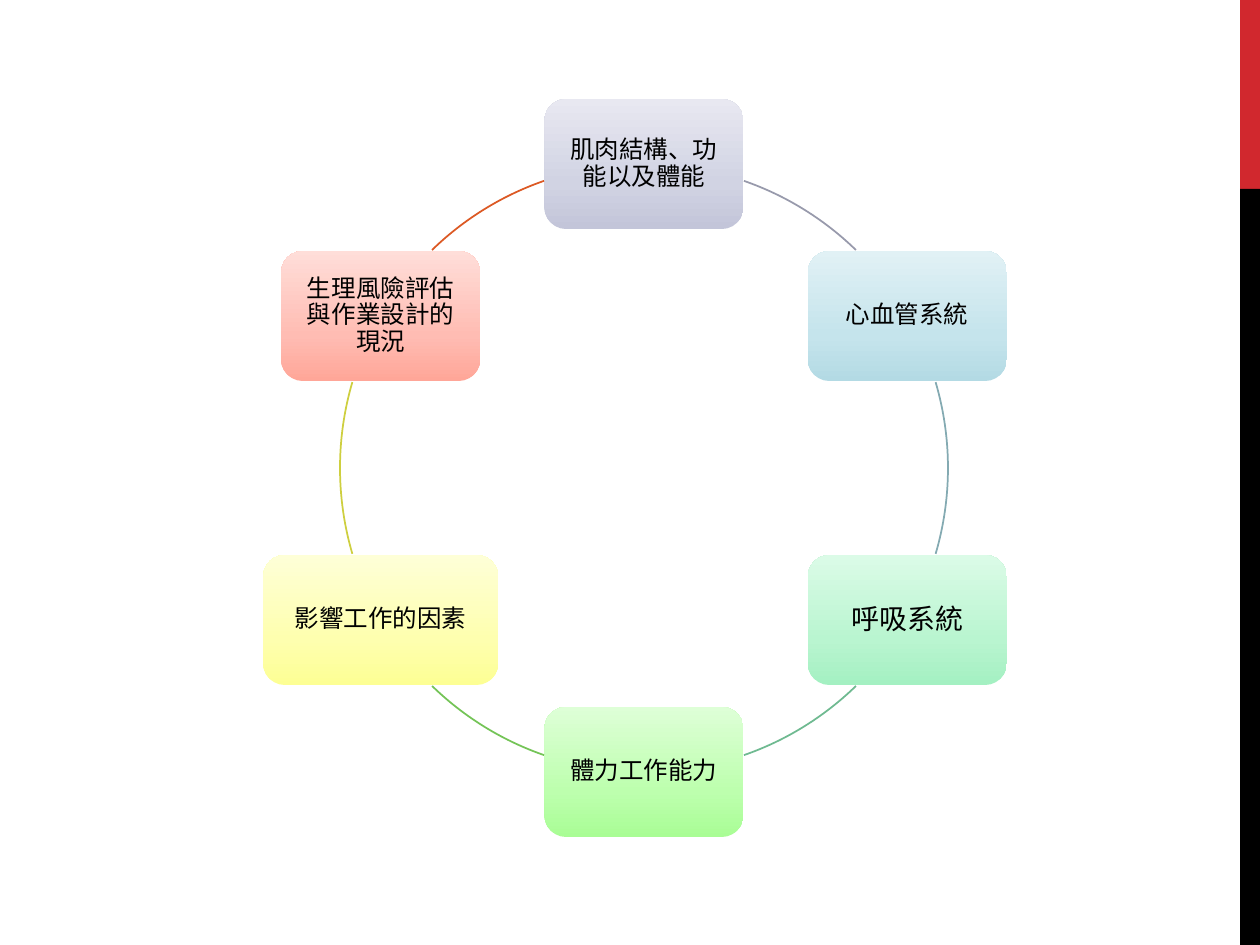
from copy import deepcopy
from math import cos, radians, sin

from pptx import Presentation
from pptx.dml.color import RGBColor
from pptx.enum.shapes import MSO_SHAPE
from pptx.enum.text import MSO_ANCHOR, PP_ALIGN
from pptx.oxml.ns import qn
from pptx.util import Emu, Pt

RECT = MSO_SHAPE.RECTANGLE
ROUND = MSO_SHAPE.ROUNDED_RECTANGLE
ARC = MSO_SHAPE.ARC
CENTER = PP_ALIGN.CENTER
MIDDLE = MSO_ANCHOR.MIDDLE

CX, CY, RADIUS = 644, 468, 304
BOX_W, BOX_H = 199, 130
STEP = 60

TOPICS = [
    ("肌肉結構、功能以及體能", 14, BOX_W, ("C3C5D9", "D1D3E3", "E8E8F1")),
    ("心血管系統", 14, BOX_W, ("B3DAE4", "C5E4EC", "E1F1F5")),
    ("呼吸系統", 16, BOX_W, ("A4F0C2", "B9F5D0", "DBFBE7")),
    ("體力工作能力", 14, BOX_W, ("A9FD95", "BDFFAE", "DEFFD7")),
    ("影響工作的因素", 14, 235, ("FDFF94", "FEFFAF", "FEFFD7")),
    ("生理風險評估與作業設計的現況", 14, BOX_W, ("FFA698", "FFBCB3", "FFDED9")),
]
ARCS = [
    (289.2, 314.2, "989AAC"),
    (343.6, 16.4, "84AAB2"),
    (45.8, 70.8, "6FBA91"),
    (109.2, 134.2, "74C457"),
    (163.6, 196.4, "CECF3F"),
    (225.8, 250.8, "DC5924"),
]


def px(n):
    return Emu(round(n * 914400 / 126))


def rgb(color):
    return RGBColor.from_string(color)


def write(tf, text, size=14, color="000000", font="Arial", margin=8):
    tf.word_wrap = True
    tf.vertical_anchor = MIDDLE
    tf.margin_left = tf.margin_right = px(margin)
    tf.margin_top = tf.margin_bottom = px(margin)
    p = tf.paragraphs[0]
    p.alignment = CENTER
    p.line_spacing = 0.9
    r = p.add_run()
    r.text = text
    r.font.size = Pt(size)
    r.font.name = font
    r.font.color.rgb = rgb(color)


class Canvas:
    stops = (0, 0.35, 1)
    line_width = Pt(1)

    def __init__(self, slide):
        self.slide = slide

    def shape(self, kind, x, y, w, h):
        s = self.slide.shapes.add_shape(kind, px(x), px(y), px(w), px(h))
        s.shadow.inherit = False
        return s

    def bar(self, x, y, w, h, color):
        s = self.shape(RECT, x, y, w, h)
        s.fill.solid()
        s.fill.fore_color.rgb = rgb(color)
        s.line.fill.background()

    def box(self, cx, cy, w, h, text, size, colors):
        s = self.shape(ROUND, cx - w / 2, cy - h / 2, w, h)
        s.line.fill.background()
        s.fill.gradient()
        s.fill.gradient_angle = 90
        stops = s._element.spPr.find(".//" + qn("a:gsLst"))
        stops.insert(1, deepcopy(stops[0]))
        for stop, position, color in zip(s.fill.gradient_stops, self.stops, colors):
            stop.position = position
            stop.color.rgb = rgb(color)
        write(s.text_frame, text, size=size)

    def arc(self, cx, cy, radius, start, end, color):
        s = self.shape(ARC, cx - radius, cy - radius, 2 * radius, 2 * radius)
        for i, angle in enumerate((start, end)):
            s.adjustments[i] = angle * 60000 / 100000
        s.fill.background()
        s.line.color.rgb = rgb(color)
        s.line.width = self.line_width


def main():
    prs = Presentation()
    prs.slide_width, prs.slide_height = px(1260), px(945)
    canvas = Canvas(prs.slides.add_slide(prs.slide_layouts[6]))

    canvas.bar(1240, 0, 20, 189, "D1282E")
    canvas.bar(1240, 189, 20, 756, "000000")

    for i, ((text, size, w, colors), (start, end, color)) in enumerate(zip(TOPICS, ARCS)):
        angle = radians(i * STEP - 90)
        x, y = CX + RADIUS * cos(angle), CY + RADIUS * sin(angle)
        canvas.box(x, y, w, BOX_H, text, size, colors)
        canvas.arc(CX, CY, RADIUS, start, end, color)

    prs.save("out.pptx")


if __name__ == "__main__":
    main()
